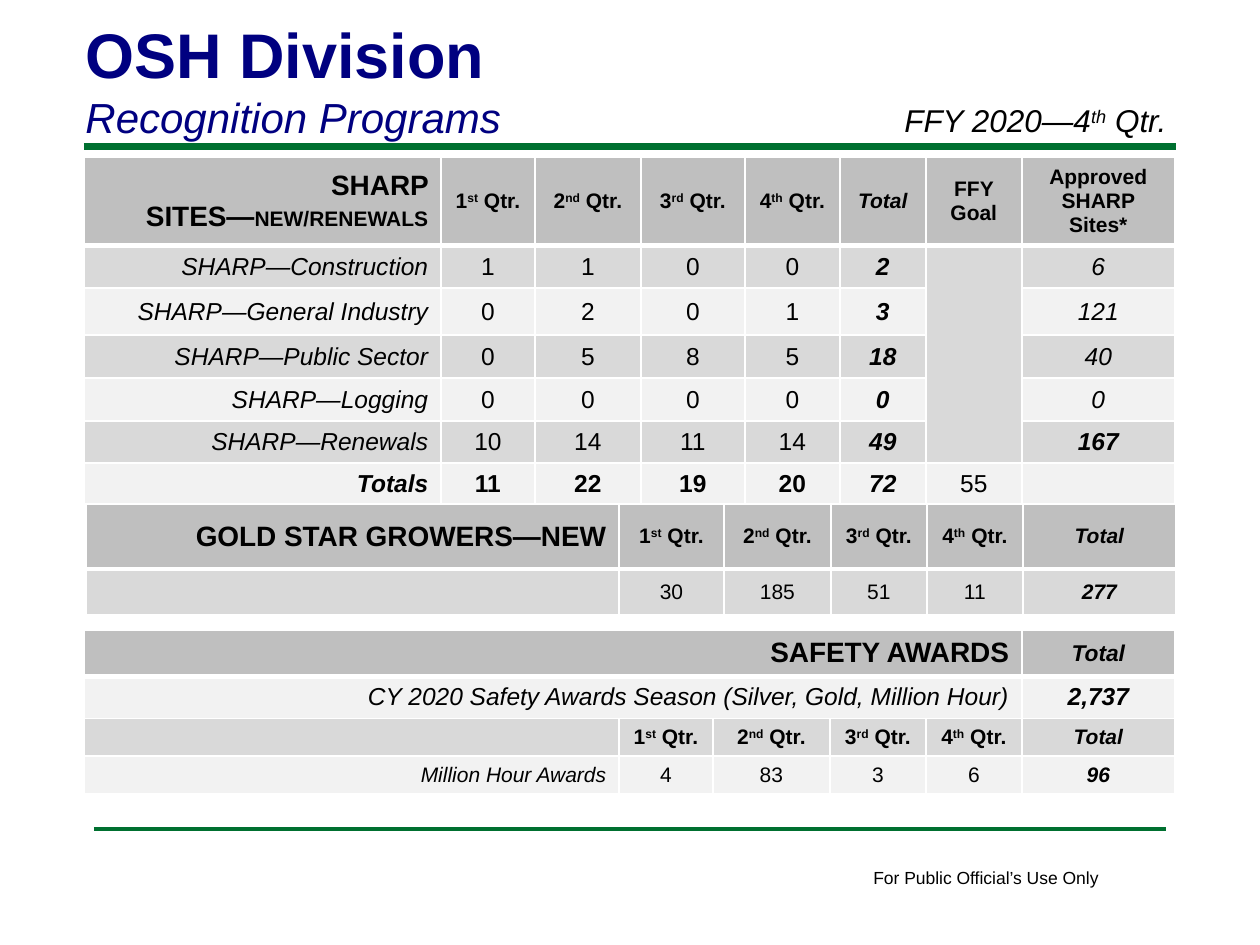
import pptx
import pptx.util
import pptx.dml.color
import pptx.enum.text
import pptx.enum.shapes
import pptx.oxml.ns
from lxml import etree

RGB = pptx.dml.color.RGBColor
GREEN = RGB(0x00, 0x70, 0x30)
NAVY = RGB(0x00, 0x00, 0x80)
BLACK = RGB(0x00, 0x00, 0x00)
HEAD = RGB(0xBF, 0xBF, 0xBF)
DARK = RGB(0xD9, 0xD9, 0xD9)
LIGHT = RGB(0xF2, 0xF2, 0xF2)
WHITE = "FFFFFF"
ALIGN = pptx.enum.text.PP_ALIGN
ANCHOR = pptx.enum.text.MSO_ANCHOR
qn = pptx.oxml.ns.qn

PX = 914400 // 126
SMALL = 12
QTRS = ["1^st^ Qtr.", "2^nd^ Qtr.", "3^rd^ Qtr.", "4^th^ Qtr."]

# rows: height, fill, size, one style letter per cell, texts
TABLES = [
    dict(left=84, top=157, cols=[357, 94, 106, 104, 95, 86, 96, 153], merge=[(1, 6, 5, 6)], rows=[
        (88, HEAD, 12, "bbbbbzbb", ["SHARP SITES—|NEW/RENEWALS", *QTRS, "Total", "FFY Goal", "Approved\nSHARP Sites*"]),
        (43, DARK, 14, "innnnzni", ["SHARP—Construction", "1", "1", "0", "0", "2", "", "6"]),
        (47, LIGHT, 14, "innnnzni", ["SHARP—General Industry", "0", "2", "0", "1", "3", "", "121"]),
        (43, DARK, 14, "innnnzni", ["SHARP—Public Sector", "0", "5", "8", "5", "18", "", "40"]),
        (43, LIGHT, 14, "innnnzni", ["SHARP—Logging", "0", "0", "0", "0", "0", "", "0"]),
        (42, DARK, 14, "innnnznz", ["SHARP—Renewals", "10", "14", "11", "14", "49", "", "167"]),
        (41, LIGHT, 14, "zbbbbznn", ["Totals", "11", "22", "19", "20", "72", "55", ""]),
    ]),
    dict(left=86, top=504, cols=[533, 105, 107, 96, 96, 153], merge=[], rows=[
        (65, HEAD, 12, "bbbbbz", ["GOLD STAR GROWERS—NEW", *QTRS, "Total"]),
        (46, DARK, 12, "nnnnnz", ["", "30", "185", "51", "11", "277"]),
    ]),
    dict(left=84, top=630, cols=[535, 94, 117, 96, 96, 153], merge=[(0, 0, 0, 4), (1, 0, 1, 4)], rows=[
        (46, HEAD, 13, "bnnnnz", ["SAFETY AWARDS", "", "", "", "", "Total"]),
        (42, LIGHT, 14, "innnnz", ["CY 2020 Safety Awards Season (Silver, Gold, Million Hour)", "", "", "", "", "2,737"]),
        (37, DARK, 12, "nbbbbz", ["", *QTRS, "Total"]),
        (38, LIGHT, 12, "innnnz", ["Million Hour Awards", "4", "83", "3", "6", "96"]),
    ]),
]
RULES = [(84, 1176, 147, 4), (94, 1166, 829, 2)]


def px(n):
    return n * PX


def write(frame, text, size=12, bold=False, italic=False, color=BLACK, align=ALIGN.LEFT):
    for i, line in enumerate(text.split("\n")):
        para = frame.add_paragraph() if i else frame.paragraphs[-1]
        para.alignment = align
        for k, part in enumerate(line.split("^")):
            if not part:
                continue
            run = para.add_run()
            run.text = part
            font = run.font
            font.name, font.size = "Arial", pptx.util.Pt(size)
            font.bold, font.italic = bold, italic
            font.color.rgb = color
            if k % 2:
                font._element.set("baseline", "30000")


def text_box(left, top, wide, high, wrap=True, anchor=ANCHOR.TOP):
    frame = slide.shapes.add_textbox(px(left), px(top), px(wide), px(high)).text_frame
    frame.word_wrap = wrap
    frame.vertical_anchor = anchor
    return frame


def edge(cell, side, width):
    line = etree.SubElement(cell._tc.get_or_add_tcPr(), qn("a:" + side), w=str(pptx.util.Pt(width)))
    fill = etree.SubElement(line, qn("a:solidFill"))
    etree.SubElement(fill, qn("a:srgbClr"), val=WHITE)


def fill_cell(cell, r, c, fill, size, style, text):
    for side in ("lnL", "lnR", "lnT", "lnB"):
        thick = (r, side) in ((0, "lnB"), (1, "lnT"))
        edge(cell, side, 3 if thick else 1)
    cell.fill.solid()
    cell.fill.fore_color.rgb = fill
    cell.vertical_anchor = ANCHOR.MIDDLE
    main = 16 if r == 0 and c == 0 else size
    for part, pt in zip(text.split("|"), (main, SMALL)):
        write(cell.text_frame, part, size=pt, bold=style in "bz", italic=style in "iz",
              align=ALIGN.CENTER if c else ALIGN.RIGHT)
    if not text:
        etree.SubElement(cell.text_frame.paragraphs[0]._p, qn("a:endParaRPr"), sz=str(SMALL * 100))


def add_table(left, top, cols, merge, rows):
    high = sum(row[0] for row in rows)
    table = slide.shapes.add_table(len(rows), len(cols), px(left), px(top), px(sum(cols)), px(high)).table
    table.first_row = table.horz_banding = False
    for col, wide in zip(table.columns, cols):
        col.width = px(wide)
    for r, (tall, fill, size, styles, texts) in enumerate(rows):
        table.rows[r].height = px(tall)
        for c, (style, text) in enumerate(zip(styles, texts)):
            fill_cell(table.cell(r, c), r, c, fill, size, style, text)
    for r1, c1, r2, c2 in merge:
        table.cell(r1, c1).merge(table.cell(r2, c2))


deck = pptx.Presentation()
deck.slide_width, deck.slide_height = px(1260), px(945)
slide = deck.slides.add_slide(deck.slide_layouts[6])

for start, end, y, width in RULES:
    rule = slide.shapes.add_connector(pptx.enum.shapes.MSO_CONNECTOR.STRAIGHT, px(start), px(y), px(end), px(y))
    rule.line.color.rgb = GREEN
    rule.line.width = pptx.util.Pt(width)
    etree.SubElement(rule._element.spPr, qn("a:effectLst"))

write(text_box(861, 861, 253, 34, wrap=False), "For Public Official’s Use Only", size=10)
title = text_box(73, 8, 1040, 140, anchor=ANCHOR.BOTTOM)
write(title, "OSH Division", size=36, bold=True, color=NAVY)
write(title, "\nRecognition Programs", size=24, italic=True, color=NAVY)

for spec_row in TABLES:
    add_table(**spec_row)

write(text_box(892, 95, 315, 50), "FFY 2020—4^th^ Qtr.", size=18, italic=True)

deck.save("out.pptx")
